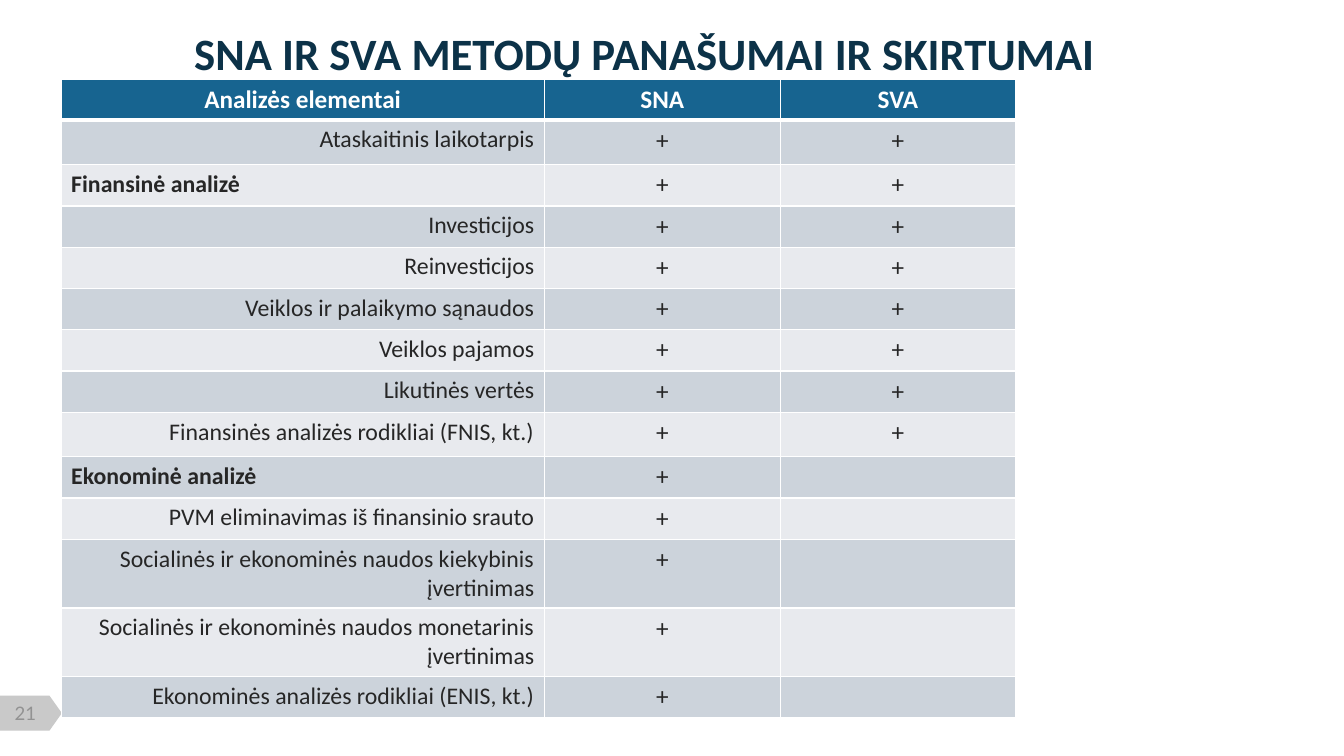
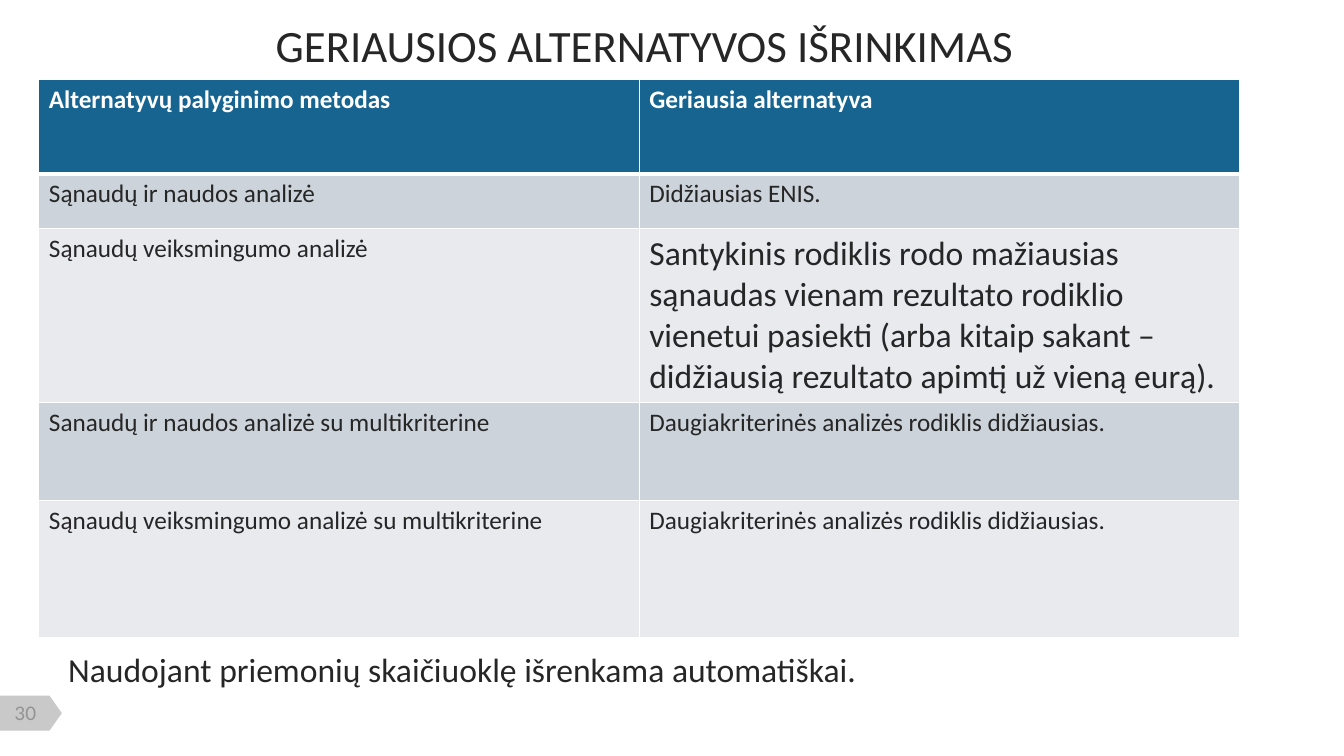
import lxml.etree
import pptx
import pptx.dml.color
import pptx.enum.shapes
import pptx.enum.text
import pptx.oxml.ns
import pptx.util

Cm = pptx.util.Cm
Pt = pptx.util.Pt
ALIGN = pptx.enum.text.PP_ALIGN
MIDDLE = pptx.enum.text.MSO_ANCHOR.MIDDLE
LEFT, MID, RIGHT = ALIGN.LEFT, ALIGN.CENTER, ALIGN.RIGHT

HUES = {
    "head": "176490",
    "dark": "CCD3DB",
    "light": "E8EAEE",
    "white": "FFFFFF",
    "navy": "0C3248",
    "ink": "262626",
    "tag": "C9C9C9",
    "page": "929292",
}
FONT = "Calibri"


def hue(name):
    return pptx.dml.color.RGBColor.from_string(HUES[name])


def write(frame, text, size, tone="ink", bold=False, align=LEFT, font=FONT):
    line = frame.paragraphs[0]
    line.alignment = align
    run = line.add_run()
    run.text = text
    run.font.name = font
    run.font.size = Pt(size)
    run.font.bold = bold
    run.font.color.rgb = hue(tone)


def add_text(slide, box, text, size, inset=None, anchor=None, **style):
    """Place a wrapped text box; inset is left, top, right, bottom in cm."""
    frame = slide.shapes.add_textbox(*map(Cm, box)).text_frame
    frame.word_wrap = True
    if inset:
        (frame.margin_left, frame.margin_top,
         frame.margin_right, frame.margin_bottom) = map(Cm, inset)
    if anchor is not None:
        frame.vertical_anchor = anchor
    write(frame, text, size, **style)


def add_title(slide, top, text, **style):
    add_text(slide, (0.4, top, 31.95, 1.32), text, 32,
             inset=(0, 0.13, 0.25, 0.13), anchor=MIDDLE, align=MID, **style)


def add_page(slide, box, number):
    """Page tag: a pentagon pointing right, with the number over it."""
    left, top, width, height = box
    # The shape is drawn upright, then turned about its centre
    tag = slide.shapes.add_shape(
        pptx.enum.shapes.MSO_SHAPE.FLOWCHART_OFFPAGE_CONNECTOR,
        Cm(left + (width - height) / 2), Cm(top + (height - width) / 2),
        Cm(height), Cm(width))
    tag.rotation = 270
    tag.shadow.inherit = False
    tag.fill.solid()
    tag.fill.fore_color.rgb = hue("tag")
    tag.line.fill.background()
    add_text(slide, (left + 0.08, top + 0.16, 1.12, 0.56), str(number), 13.3,
             inset=(0, 0, 0, 0), anchor=MIDDLE, tone="page", align=MID,
             font="Lato")


def add_edge(cell, side, width):
    edge = lxml.etree.SubElement(
        cell._tc.get_or_add_tcPr(), pptx.oxml.ns.qn("a:ln" + side),
        w=str(Pt(width)))
    fill = lxml.etree.SubElement(edge, pptx.oxml.ns.qn("a:solidFill"))
    lxml.etree.SubElement(fill, pptx.oxml.ns.qn("a:srgbClr"),
                          val=HUES["white"])


def add_grid(slide, spot, cols, rows, cells):
    """Banded table; each cell is None or (text, size, bold, align)."""
    grid = slide.shapes.add_table(
        len(rows), len(cols), *map(Cm, (*spot, sum(cols), sum(rows)))).table
    for col, width in zip(grid.columns, cols):
        col.width = Cm(width)
    for i, (row, height) in enumerate(zip(grid.rows, rows)):
        row.height = Cm(height)
        band = "head" if i == 0 else "dark" if i % 2 else "light"
        for cell, part in zip(row.cells, cells[i]):
            # Edges must come before the fill
            for side in "LRTB":
                thick = (i, side) in ((0, "B"), (1, "T"))
                add_edge(cell, side, 3 if thick else 1)
            cell.fill.solid()
            cell.fill.fore_color.rgb = hue(band)
            if part:
                text, size, bold, align = part
                write(cell.text_frame, text, size,
                      "white" if i == 0 else "ink", bold, align)


def start(deck, number):
    slide = deck.slides.add_slide(deck.slide_layouts[6])
    add_page(slide, (0, 17.53, 1.56, 0.88), number)
    return slide


def match_slide(deck):
    slide = start(deck, 21)
    add_title(slide, 0.66, "SNA IR SVA METODŲ PANAŠUMAI IR SKIRTUMAI",
              tone="navy", bold=True)
    # Label, number of methods that use it, row height
    items = [
        ("Ataskaitinis laikotarpis", 2, 1.12),
        ("Finansinė analizė", 2, 1.04),
        ("Investicijos", 2, 1.04),
        ("Reinvesticijos", 2, 1.04),
        ("Veiklos ir palaikymo sąnaudos", 2, 1.04),
        ("Veiklos pajamos", 2, 1.04),
        ("Likutinės vertės", 2, 1.04),
        ("Finansinės analizės rodikliai (FNIS, kt.)", 2, 1.12),
        ("Ekonominė analizė", 1, 1.04),
        ("PVM eliminavimas iš finansinio srauto", 1, 1.04),
        ("Socialinės ir ekonominės naudos kiekybinis įvertinimas", 1, 1.73),
        ("Socialinės ir ekonominės naudos monetarinis įvertinimas", 1, 1.73),
        ("Ekonominės analizės rodikliai (ENIS, kt.)", 1, 1.04),
    ]
    groups = ("Finansinė analizė", "Ekonominė analizė")
    plus = ("+", 18, False, MID)
    cells = [[(text, 18, True, MID)
              for text in ("Analizės elementai", "SNA", "SVA")]]
    for text, count, _ in items:
        group = text in groups
        label = (text, 17, group, LEFT if group else RIGHT)
        cells.append([label, plus, plus if count == 2 else None])
    add_grid(slide, (1.54, 1.99), (12.18, 5.94, 5.94),
             [1.04] + [item[2] for item in items], cells)


def choice_slide(deck):
    slide = start(deck, 30)
    add_title(slide, 0.46, "GERIAUSIOS ALTERNATYVOS IŠRINKIMAS")
    best = "Daugiakriterinės analizės rodiklis didžiausias."
    items = [
        ("Alternatyvų palyginimo metodas", "Geriausia alternatyva", 18, 2.39),
        ("Sąnaudų ir naudos analizė", "Didžiausias ENIS.", 18, 1.37),
        ("Sąnaudų veiksmingumo analizė",
         "Santykinis rodiklis rodo mažiausias sąnaudas vienam rezultato "
         "rodiklio vienetui pasiekti (arba kitaip sakant – didžiausią "
         "rezultato apimtį už vieną eurą).", 24, 4.39),
        ("Sanaudų ir naudos analizė su multikriterine", best, 18, 2.47),
        ("Sąnaudų veiksmingumo analizė su multikriterine", best, 18, 3.46),
    ]
    cells = [[(name, 18, i == 0, LEFT), (pick, size, i == 0, LEFT)]
             for i, (name, pick, size, _) in enumerate(items)]
    add_grid(slide, (0.98, 1.99), (15.13, 15.13),
             [item[3] for item in items], cells)
    # Closing note
    add_text(slide, (1.47, 16.23, 23.8, 1.28),
             "Naudojant priemonių skaičiuoklę išrenkama automatiškai.", 24)


def main():
    deck = pptx.Presentation()
    deck.slide_width, deck.slide_height = Cm(33.87), Cm(19.05)
    match_slide(deck)
    choice_slide(deck)
    deck.save("out.pptx")


if __name__ == "__main__":
    main()
